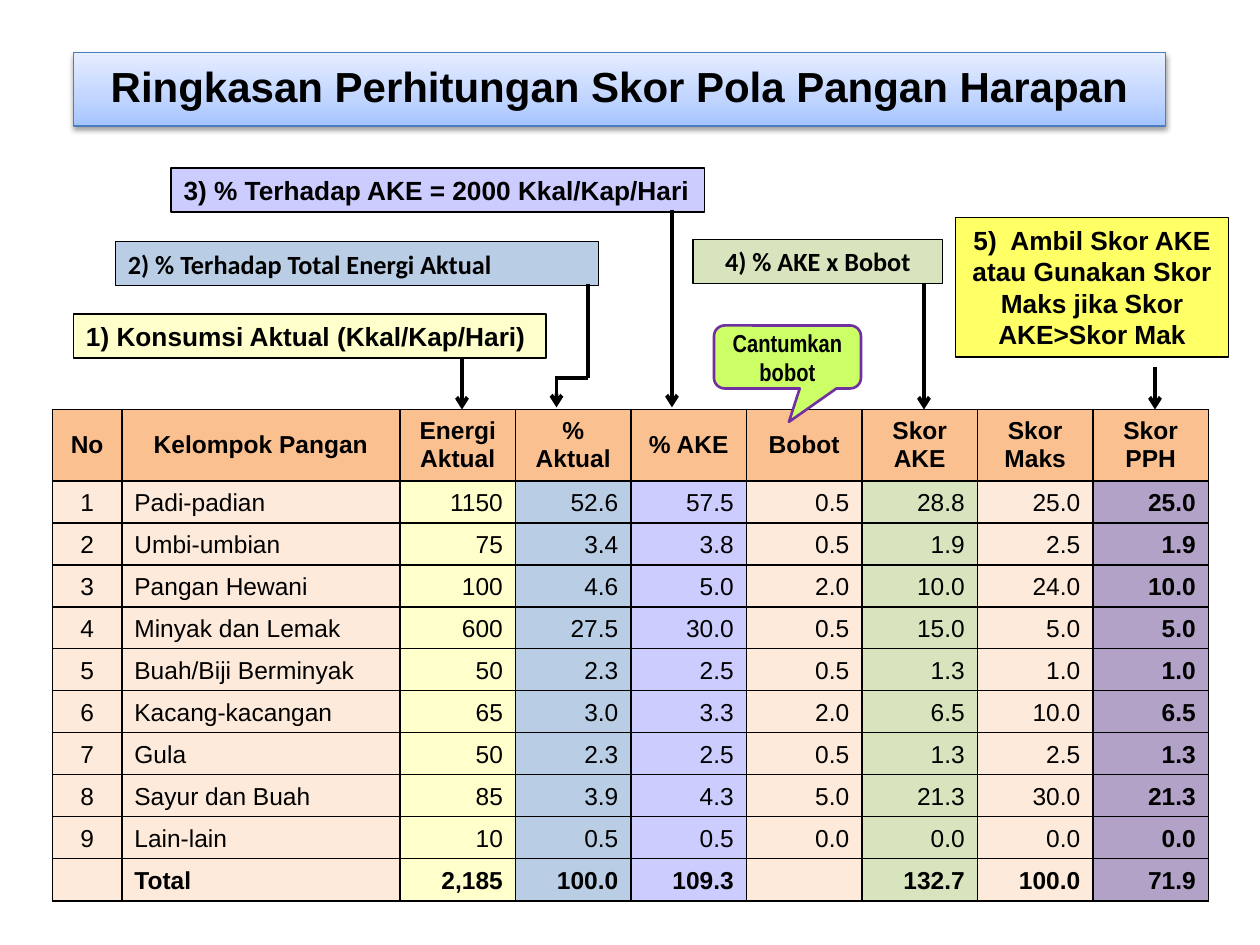
from copy import deepcopy

from lxml import etree
from pptx import Presentation
from pptx import util as u
from pptx.dml.color import RGBColor
from pptx.enum import shapes, text
from pptx.oxml.ns import qn

BLACK = RGBColor(0x00, 0x00, 0x00)
CREAM = RGBColor(0xFF, 0xFF, 0xCC)
BLUE = RGBColor(0xB9, 0xCD, 0xE5)
LILAC = RGBColor(0xCC, 0xCC, 0xFF)
GREEN = RGBColor(0xD7, 0xE4, 0xBD)
YELLOW = RGBColor(0xFF, 0xFF, 0x66)
ORANGE = RGBColor(0xFA, 0xC0, 0x90)
PEACH = RGBColor(0xFD, 0xEA, 0xDA)
PURPLE = RGBColor(0xB3, 0xA2, 0xC7)
LIME = RGBColor(0xCC, 0xFF, 0x66)
VIOLET = RGBColor(0x70, 0x30, 0xA0)
TITLE_LINE = RGBColor(0x4B, 0x7E, 0xBC)
TITLE_STOPS = [(0, RGBColor(0xA4, 0xC4, 0xFF)), (0.35, RGBColor(0xBF, 0xD4, 0xFF)),
               (1, RGBColor(0xE6, 0xEE, 0xFF))]

LEFT, CENTER, RIGHT = text.PP_ALIGN.LEFT, text.PP_ALIGN.CENTER, text.PP_ALIGN.RIGHT
MIDDLE, BOTTOM = text.MSO_ANCHOR.MIDDLE, text.MSO_ANCHOR.BOTTOM

deck = Presentation()
deck.slide_width, deck.slide_height = u.Inches(10), u.Inches(7.5)
page = deck.slides.add_slide(deck.slide_layouts[6])
UNIT = deck.slide_width / 120  # the page is a grid of 120 columns by 90 rows


def write(frame, words, size, align, bold=True, font="Arial"):
    frame.text = words
    para = frame.paragraphs[0]
    para.alignment = align
    for span in para.runs:
        span.font.size, span.font.name, span.font.bold = u.Pt(size), font, bold
        span.font.color.rgb = BLACK


def add_box(kind, place, fill, line, width, words, size, align, font="Arial"):
    box = page.shapes.add_shape(kind, *[round(n * UNIT) for n in place])
    box.shadow.inherit = False
    if fill is not None:
        box.fill.solid()
        box.fill.fore_color.rgb = fill
    box.line.color.rgb, box.line.width = line, u.Pt(width)
    box.text_frame.word_wrap = True
    box.text_frame.vertical_anchor = MIDDLE
    write(box.text_frame, words, size, align, font=font)
    return box


# Step labels
RECT = shapes.MSO_SHAPE.RECTANGLE
for place, fill, words, align, font in [
    ((7, 29.9, 45, 4.2), CREAM, "1) Konsumsi Aktual (Kkal/Kap/Hari)", LEFT, "Arial"),
    ((11, 23, 46, 4.2), BLUE, "2) % Terhadap Total Energi Aktual", LEFT, "Calibri"),
    ((16.3, 16, 50.8, 4.2), LILAC, "3) % Terhadap AKE = 2000 Kkal/Kap/Hari", LEFT, "Arial"),
    ((66, 22.8, 23.8, 4.2), GREEN, "4) % AKE x Bobot", CENTER, "Calibri"),
    ((91, 20.7, 26, 13.3), YELLOW,
     "5)  Ambil Skor AKE atau Gunakan Skor Maks jika Skor AKE>Skor Mak", CENTER, "Arial"),
]:
    add_box(RECT, place, fill, BLACK, 0.75, words, 15, align, font)

# Score table
rows = [
    ["No", "Kelompok Pangan", "Energi\vAktual", "% Aktual", "% AKE", "Bobot",
     "Skor AKE", "Skor Maks", "Skor PPH"],
    ["1", "Padi-padian", "1150", "52.6", "57.5", "0.5", "28.8", "25.0", "25.0"],
    ["2", "Umbi-umbian", "75", "3.4", "3.8", "0.5", "1.9", "2.5", "1.9"],
    ["3", "Pangan Hewani", "100", "4.6", "5.0", "2.0", "10.0", "24.0", "10.0"],
    ["4", "Minyak dan Lemak", "600", "27.5", "30.0", "0.5", "15.0", "5.0", "5.0"],
    ["5", "Buah/Biji Berminyak", "50", "2.3", "2.5", "0.5", "1.3", "1.0", "1.0"],
    ["6", "Kacang-kacangan", "65", "3.0", "3.3", "2.0", "6.5", "10.0", "6.5"],
    ["7", "Gula", "50", "2.3", "2.5", "0.5", "1.3", "2.5", "1.3"],
    ["8", "Sayur dan Buah", "85", "3.9", "4.3", "5.0", "21.3", "30.0", "21.3"],
    ["9", "Lain-lain", "10", "0.5", "0.5", "0.0", "0.0", "0.0", "0.0"],
    ["", "Total", "2,185", "100.0", "109.3", "", "132.7", "100.0", "71.9"],
]
column_widths = [6.6, 26.5] + [11] * 7
row_heights = [6.8] + [4] * 10
column_fills = [PEACH, PEACH, CREAM, BLUE, LILAC, PEACH, GREEN, PEACH, PURPLE]
column_aligns = [CENTER, LEFT] + [RIGHT] * 7
size = [round(sum(lengths) * UNIT) for lengths in (column_widths, row_heights)]
table = page.shapes.add_table(len(rows), len(column_widths), round(5 * UNIT),
                              round(39 * UNIT), *size).table
table.first_row = table.horz_banding = False
for column, width in zip(table.columns, column_widths):
    column.width = round(width * UNIT)
for row, height in zip(table.rows, row_heights):
    row.height = round(height * UNIT)

for r, values in enumerate(rows):
    for c, value in enumerate(values):
        cell = table.cell(r, c)
        header, last = r == 0, r == len(rows) - 1
        write(cell.text_frame, value, 14, CENTER if header else column_aligns[c],
              bold=header or last or c == len(values) - 1)
        if not value:  # keeps the empty cell as low as its row
            etree.SubElement(cell.text_frame.paragraphs[0]._p, qn("a:endParaRPr"), sz="1400")
        cell.vertical_anchor = MIDDLE if header else BOTTOM
        for side in ("a:lnL", "a:lnR", "a:lnT", "a:lnB"):
            border = etree.SubElement(cell._tc.get_or_add_tcPr(), qn(side), w="12700")
            paint = etree.SubElement(border, qn("a:solidFill"))
            etree.SubElement(paint, qn("a:srgbClr"), val=str(BLACK))
        cell.fill.solid()
        cell.fill.fore_color.rgb = ORANGE if header else column_fills[c]

# Title with gradient and soft shadow
title = add_box(RECT, (7, 5, 104, 7), None, TITLE_LINE, 0.75,
                "Ringkasan Perhitungan Skor Pola Pangan Harapan", 24, CENTER)
title.text_frame.paragraphs[0].line_spacing = 0.9
title.fill.gradient()
title.fill.gradient_angle = 90
stop_list = title._element.spPr.find(".//" + qn("a:gsLst"))
stop_list.append(deepcopy(stop_list[-1]))
for stop, (position, color) in zip(title.fill.gradient_stops, TITLE_STOPS):
    stop.position, stop.color.rgb = position, color
effects = title._element.spPr.find(qn("a:effectLst"))
shadow = etree.SubElement(effects, qn("a:outerShdw"), blurRad="40000", dist="20000",
                          dir="5400000", rotWithShape="0")
shade = etree.SubElement(shadow, qn("a:srgbClr"), val=str(BLACK))
etree.SubElement(shade, qn("a:alpha"), val="38000")

# Lines and arrows from the labels to the columns
for x1, y1, x2, y2, arrow in [
    (44, 34, 44, 39, True),
    (56, 27, 56, 36, False),
    (53, 36, 56, 36, False),
    (53, 35.8, 53, 38.8, True),
    (64, 20, 64, 38.8, True),
    (88, 27, 88, 39, True),
    (110, 35, 110, 39, True),
]:
    line = page.shapes.add_connector(shapes.MSO_CONNECTOR.STRAIGHT,
                                     *[round(n * UNIT) for n in (x1, y1, x2, y2)])
    line.line.color.rgb, line.line.width = BLACK, u.Pt(2.25)
    if arrow:
        etree.SubElement(line.line._get_or_add_ln(), qn("a:tailEnd"), type="arrow")
    etree.SubElement(line._element.spPr, qn("a:effectLst"))

# Callout over the weight column
callout = add_box(shapes.MSO_SHAPE.ROUNDED_RECTANGULAR_CALLOUT, (68, 31, 14, 6), LIME,
                  VIOLET, 1.5, "Cantumkan bobot", 14, CENTER, "Arial Narrow")
for i, value in enumerate((0.01, 1.03, 0.17)):
    callout.adjustments[i] = value

deck.save("out.pptx")
